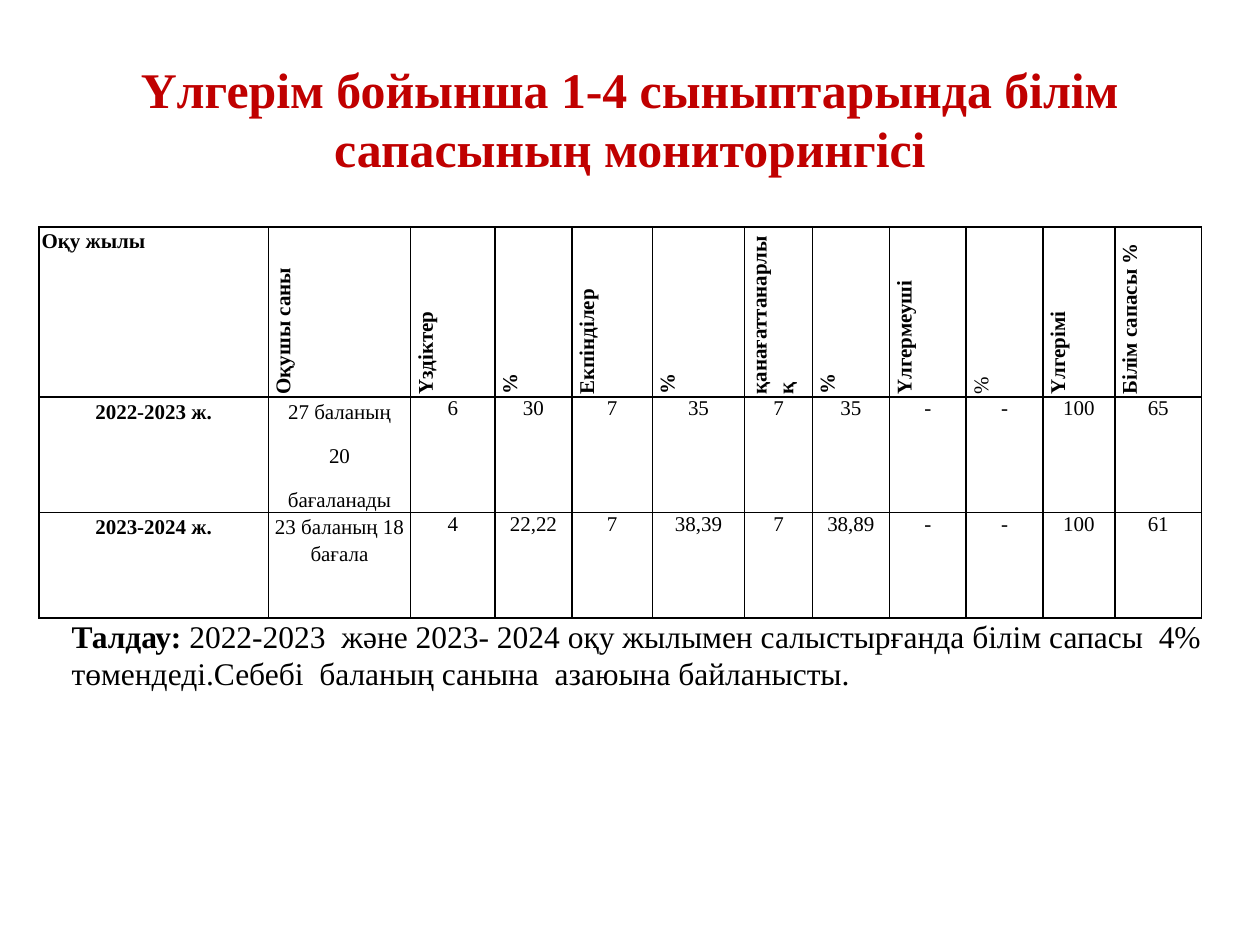
from dataclasses import dataclass

from lxml.etree import SubElement
from pptx import Presentation
from pptx.dml.color import RGBColor
from pptx.enum.text import MSO_ANCHOR, PP_ALIGN
from pptx.oxml.ns import qn
from pptx.util import Inches, Pt


@dataclass(frozen=True)
class Theme:
    font: str = "Times New Roman"
    ink: RGBColor = RGBColor(0, 0, 0)
    accent: RGBColor = RGBColor(0xC0, 0, 0)
    title_size: Pt = Pt(28.5)
    table_size: Pt = Pt(12)
    analysis_size: Pt = Pt(18)
    border: Pt = Pt(1)


THEME = Theme()


def style(font, size, bold=False, color=THEME.ink):
    font.name, font.size, font.bold = THEME.font, size, bold
    font.color.rgb = color


def draw_borders(cell):
    """Line all four sides; borders must come before the fill in the cell properties."""
    properties = cell._tc.get_or_add_tcPr()
    for position, side in enumerate(("lnL", "lnR", "lnT", "lnB")):
        line = SubElement(properties, qn(f"a:{side}"), w=str(THEME.border))
        fill = SubElement(line, qn("a:solidFill"))
        SubElement(fill, qn("a:srgbClr"), val=str(THEME.ink))
        properties.insert(position, line)


presentation = Presentation()
presentation.slide_width, presentation.slide_height = Inches(10), Inches(7.5)
W, H = presentation.slide_width, presentation.slide_height
slide = presentation.slides.add_slide(presentation.slide_layouts[5])

# Title
title = slide.shapes.title
title.left, title.top = int(W * 0.05), int(H * 0.04)
title.width, title.height = int(W * 0.9), int(H * 0.17)
title.text_frame.text = "Үлгерім бойынша 1-4 сыныптарында білім сапасының мониторингісі"
title.text_frame.vertical_anchor = MSO_ANCHOR.MIDDLE
heading = title.text_frame.paragraphs[0]
heading.alignment = PP_ALIGN.CENTER
style(heading.font, THEME.title_size, True, THEME.accent)

# Monitoring table: column and row sizes in hundredths of an inch
COLUMNS = [182, 113, 67, 61, 64, 73, 54, 61, 61, 61, 57, 69]
ROWS = [102, 84, 84]
RESULTS = [
    ["Оқу жылы", "Оқушы саны", "Үздіктер", "%", "Екпінділер", "%",
     "қанағаттанарлық", "%", "Үлгермеуші", "%", "Үлгерімі", "Білім сапасы %"],
    ["2022-2023 ж.", "27 баланың\n20\nбағаланады", "6", "30", "7", "35",
     "7", "35", "-", "-", "100", "65"],
    ["2023-2024 ж.", "23 баланың 18 бағала", "4", "22,22", "7", "38,39",
     "7", "38,89", "-", "-", "100", "61"],
]
PLAIN_HEADER = 9

monitoring = slide.shapes.add_table(
    len(ROWS), len(COLUMNS), int(W * 0.031), int(H * 0.24),
    Inches(sum(COLUMNS) / 100), Inches(sum(ROWS) / 100)).table
for column, width in zip(monitoring.columns, COLUMNS):
    column.width = Inches(width / 100)
for row, height in zip(monitoring.rows, ROWS):
    row.height = Inches(height / 100)

for r, results in enumerate(RESULTS):
    for c, value in enumerate(results):
        cell = monitoring.cell(r, c)
        is_header = r == 0
        cell.margin_left = cell.margin_right = Inches(0.02)
        cell.margin_top = cell.margin_bottom = 0
        cell.fill.background()
        draw_borders(cell)
        if is_header and c > 0:
            cell._tc.get_or_add_tcPr().set("vert", "vert270")
        cell.text_frame.text = value
        for paragraph in cell.text_frame.paragraphs:
            paragraph.alignment = PP_ALIGN.LEFT if is_header else PP_ALIGN.CENTER
            if is_header or c < 2:
                paragraph.line_spacing, paragraph.space_after = 1.15, Pt(10)
            style(paragraph.font, THEME.table_size,
                  c == 0 or (is_header and c != PLAIN_HEADER))

# Analysis
analysis = slide.shapes.add_textbox(
    int(W * 0.047), int(H * 0.645), int(W * 0.953), int(H * 0.095)).text_frame
analysis.word_wrap = True
analysis.vertical_anchor = MSO_ANCHOR.MIDDLE
for text, bold in (
    ("Талдау: ", True),
    ("2022-2023  және 2023- 2024 оқу жылымен салыстырғанда білім сапасы  4%  "
     "төмендеді.Себебі  баланың санына  азаюына байланысты.", False),
):
    run = analysis.paragraphs[0].add_run()
    run.text = text
    style(run.font, THEME.analysis_size, bold)

presentation.save("out.pptx")
